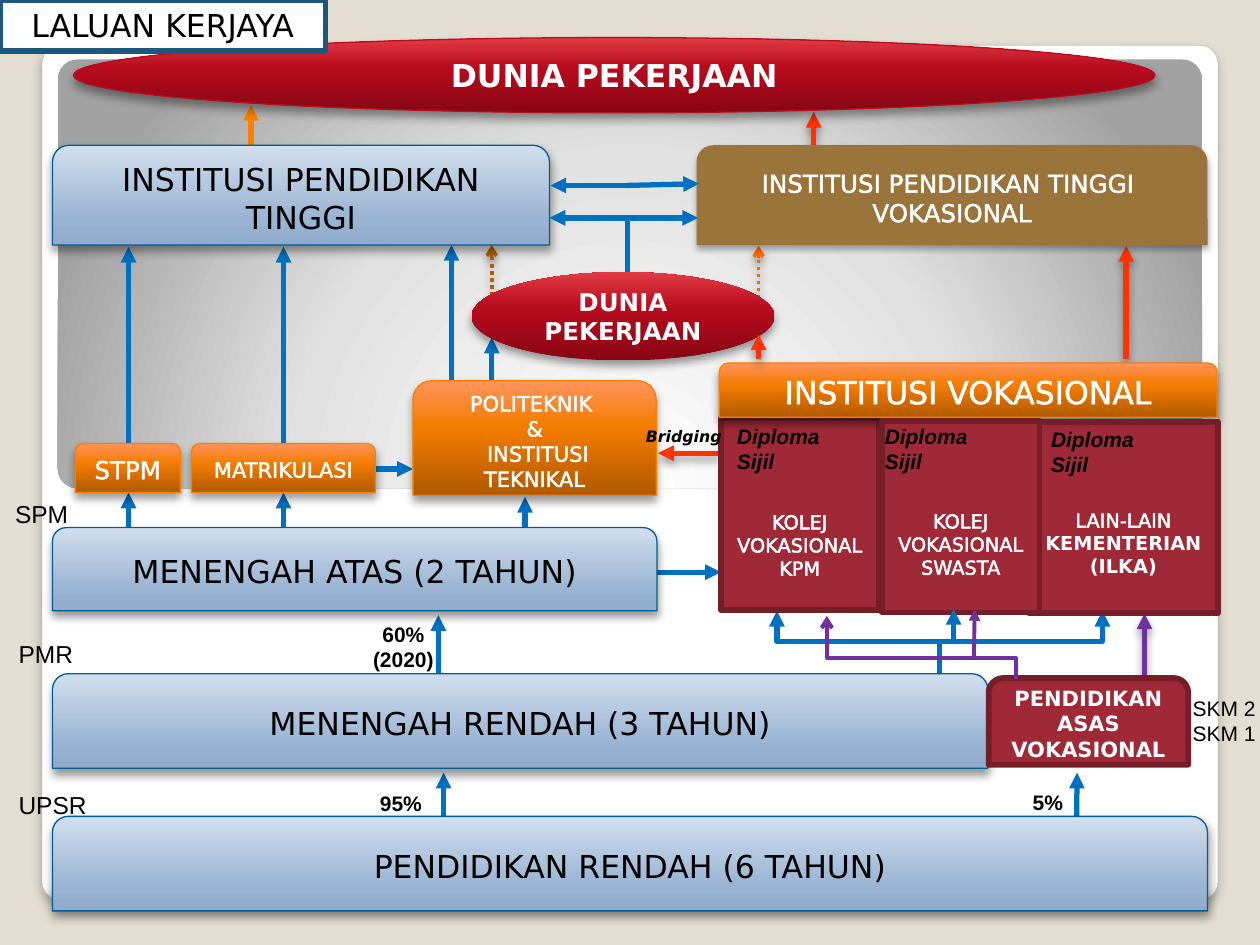
"""Build the LALUAN KERJAYA career pathway slide."""
from pptx import Presentation
from pptx.dml.color import RGBColor
from pptx.enum.dml import MSO_LINE
from pptx.enum.shapes import MSO_CONNECTOR as LINK, MSO_SHAPE as SHAPE
from pptx.enum.text import MSO_ANCHOR, MSO_AUTO_SIZE, PP_ALIGN
from pptx.oxml import parse_xml
from pptx.oxml.ns import nsdecls, qn
from pptx.util import Pt

SANS, ARIAL = "DejaVu Sans", "Arial"
WHITE, BLACK = "FFFFFF", "000000"
BLUE, RED, PURPLE = "0070C0", "FF3300", "7030A0"
SOFT, FAINT, PANEL = (40, 5.2, 3), (32, 3.5, 2.2), (25, 6, 4)
UP = '<a:lin ang="16200000" scaled="0"/>'
DOWN = '<a:lin ang="5400000" scaled="0"/>'
GLOW = '<a:path path="circle"><a:fillToRect l="50000" t="175000" r="50000" b="-75000"/></a:path>'

STYLES = {
    "white panel": (([(0, WHITE), (98, WHITE), (99, "F7F7F7"), (100, "DADADA")], DOWN),
                    ("A4A4A4", 0.16), PANEL),
    "grey panel": (([(0, WHITE), (55, "E1E1E1"), (100, "A2A2A2")], GLOW), None, None),
    "school": (([(0, "90ABCB"), (25, "99B3D2"), (100, "D1DEEE")], UP), ("035E94", 0.75), SOFT),
    "work": (([(0, "870614"), (60, "B80B1E"), (100, "E13C45")], UP), ("BC0B1F", 0.75), SOFT),
    "small work": (([(0, "870614"), (60, "B80B1E"), (100, "E13C45")], UP), None, SOFT),
    "college": (([(0, "B05A00"), (60, "F47C00"), (100, "FF945C")], UP), ("F97F00", 0.75), SOFT),
    "vocational": ("9F2936", ("761E28", 3.35), None),
    "brown": ("9A743A", None, FAINT),
}
PANELS = [("white panel", (24, 26, 672, 488), 0.021), ("grey panel", (33, 34, 654, 245), 0.046)]

TAB, OVAL, RECT = SHAPE.ROUND_2_SAME_RECTANGLE, SHAPE.OVAL, SHAPE.RECTANGLE
BOXES = [
    (RECT, "vocational", (412, 239, 90, 109.5), ["KOLEJ VOKASIONAL KPM"], 11, WHITE, 0.25, 35),
    (OVAL, "work", (42, 21.5, 618, 43), ["*DUNIA PEKERJAAN"], 18, WHITE, 0, 0),
    (TAB, "school", (30, 83, 284, 57), ["INSTITUSI PENDIDIKAN TINGGI"], 18, BLACK, 0.25, 0),
    (TAB, "brown", (398, 83, 292, 57), ["INSTITUSI PENDIDIKAN TINGGI ", "VOKASIONAL"],
     14, WHITE, 1.45, 0),
    (TAB, "school", (30, 466.5, 660, 54), ["PENDIDIKAN RENDAH (6 TAHUN)"], 18, BLACK, 0.25, 0),
    (TAB, "school", (30, 385, 534.5, 54), ["MENENGAH RENDAH (3 TAHUN)"], 18, BLACK, 0.25, 0),
    (TAB, "vocational", (565, 387.5, 114, 49.5), ["*PENDIDIKAN ASAS VOKASIONAL"], 12, WHITE, 0, 0),
    (TAB, "college", (43, 253.5, 60, 28), ["STPM"], 14, WHITE, 0.25, 0),
    (TAB, "college", (109.5, 253.5, 105, 28), ["MATRIKULASI"], 12, WHITE, 0.25, 0),
    (TAB, "school", (30, 301.5, 345.5, 47.5), ["MENENGAH ATAS (2 TAHUN)"], 18, BLACK, 0.25, 0),
    (OVAL, "small work", (269.5, 155.5, 173, 50.5), ["*DUNIA PEKERJAAN"], 14, WHITE, 0, 0),
    (TAB, "college", (411, 207.5, 284.5, 31), ["INSTITUSI VOKASIONAL"], 18, WHITE, 1.45, 0),
    (TAB, "college", (236, 217.5, 139, 65.5), ["POLITEKNIK ", "&", " INSTITUSI TEKNIKAL"],
     12, WHITE, 0.25, 0),
    (RECT, "vocational", (588, 241, 108, 109.5), ["LAIN-LAIN", "*KEMENTERIAN (ILKA)"],
     11, WHITE, 0.25, 29),
    (RECT, "vocational", (504, 240.5, 90, 109.5), ["KOLEJ VOKASIONAL SWASTA"], 11, WHITE, 0.25, 31),
]

LABELS = [
    ((3.5, 448, 90, 24.5), ["UPSR"], 14, ARIAL, "", False),
    ((3.5, 361.5, 90, 24.5), ["PMR"], 14, ARIAL, "", False),
    ((1.5, 281.5, 90, 24.5), ["SPM"], 14, ARIAL, "", False),
    ((205, 351.5, 51, 36), ["60%", "(2020)"], 12, ARIAL, "b", True),
    ((210, 448, 51, 21.5), ["95%"], 12, ARIAL, "b", False),
    ((583, 447.5, 51, 21.5), ["5%"], 12, ARIAL, "b", False),
    ((674.5, 394, 66, 36), ["SKM 2", "SKM 1"], 12, ARIAL, "", False),
    ((362, 240.5, 60, 18), ["Bridging"], 9, SANS, "bi", False),
] + [((x, y, 84, 36), ["Diploma", "Sijil"], 12, ARIAL, "bi", False)
     for x, y in ((414, 238.5), (498.5, 238.5), (593.5, 240))]

HEAD, BOTH, PLAIN, OPEN = {"tail": "triangle"}, {"head": "triangle", "tail": "triangle"}, {}, {"tail": "arrow"}
BACK_ARROWS = [
    (BLUE, 3, HEAD, None, [
        (300, 333, 300, 284), (258, 230, 258, 140), (366.5, 327, 412, 327), (191, 268, 236, 268),
        (281, 236, 281, 193), (250.5, 411, 250.5, 351.5), (253.5, 487, 253.5, 441.5),
        (615, 487, 615.5, 441.5)]
     + [(x, y1, x, y2) for x in (73.5, 162) for y1, y2 in ((263, 141), (330, 281.5))]),
    (BLUE, 3, PLAIN, None, [(358.5, 126, 358.5, 186), (537, 407.5, 537, 366.5)]),
    (RED, 3, HEAD, SOFT, [(412, 259, 376, 259), (465, 124, 465, 64), (643.5, 205, 643.5, 140.5)]),
    ("F97F00", 3, HEAD, None, [(143.5, 119, 143.5, 60)]),
    ("FF6600", 2, OPEN, SOFT, [(433.5, 170.5, 433.5, 140.5)]),
    ("B45F07", 2, OPEN, SOFT, [(281, 169, 281, 140)]),
    (PURPLE, 3, HEAD, SOFT, [(654, 386.5, 654, 350.5)]),
]
FRONT_ARROWS = [
    (RED, 3, HEAD, SOFT, [(433.5, 205, 433.5, 191)]),
    (BLUE, 3, HEAD, None, [(357, 106, 314.5, 106), (357, 106, 399.5, 105), (545, 366, 545, 348)]),
    (BLUE, 3, BOTH, None, [(314, 124.5, 399, 124.5)]),
    (PURPLE, 2.25, HEAD, None, [(556.5, 376.5, 557, 348)]),
]
FORK = [(444, 349), (444, 366.5), (630, 366.5), (630, 349)]
ELBOW = (544.5, 316, 508.5, 424)


def rgb(value):
    return RGBColor.from_string(value)


def points(values):
    return [Pt(v) for v in values]


def set_shadow(shape, shadow):
    props = shape._element.spPr
    effects = props.find(qn("a:effectLst"))
    if effects is None:
        effects = parse_xml(f"<a:effectLst {nsdecls('a')}/>")
        props.append(effects)
    if shadow:
        alpha, blur, dist = shadow
        effects.append(parse_xml(
            f'<a:outerShdw {nsdecls("a")} blurRad="{Pt(blur)}" dist="{Pt(dist)}" dir="5400000" '
            f'rotWithShape="0"><a:srgbClr val="{BLACK}"><a:alpha val="{alpha * 1000}"/>'
            '</a:srgbClr></a:outerShdw>'))


def set_line(shape, color, width, ends=PLAIN):
    shape.line.color.rgb = rgb(color)
    shape.line.width = Pt(width)
    for end, kind in ends.items():
        shape.line._get_or_add_ln().append(parse_xml(f'<a:{end}End {nsdecls("a")} type="{kind}"/>'))


def add_box(kind, style, frame):
    fill, line, shadow = STYLES[style]
    box = slide.shapes.add_shape(kind, *points(frame))
    box.shadow.inherit = False
    box.fill.solid()
    if isinstance(fill, str):
        box.fill.fore_color.rgb = rgb(fill)
    else:
        stops, direction = fill
        marks = "".join(f'<a:gs pos="{at * 1000}"><a:srgbClr val="{c}"/></a:gs>' for at, c in stops)
        props = box._element.spPr
        props.replace(props.find(qn("a:solidFill")), parse_xml(
            f'<a:gradFill {nsdecls("a")} rotWithShape="1"><a:gsLst>{marks}</a:gsLst>{direction}</a:gradFill>'))
    if line:
        set_line(box, *line)
    else:
        box.line.fill.background()
    set_shadow(box, shadow)
    return box


def write(shape, lines, size, font, color, centred=True, marks="", outline=0):
    frame = shape.text_frame
    frame.word_wrap = True
    for i, text in enumerate(lines):
        para = frame.add_paragraph() if i else frame.paragraphs[0]
        para.alignment = PP_ALIGN.CENTER if centred else PP_ALIGN.LEFT
        run = para.add_run()
        run.text = text.lstrip("*")
        run.font.name, run.font.size = font, Pt(size)
        run.font.bold = "b" in marks or text.startswith("*")
        run.font.italic = "i" in marks
        run.font.color.rgb = rgb(color)
        if outline and not run.font.bold:
            run.font._element.insert(0, parse_xml(
                f'<a:ln {nsdecls("a")} w="{Pt(outline)}"><a:solidFill><a:srgbClr val="{color}"/>'
                '</a:solidFill></a:ln>'))


def add_arrows(groups):
    for color, width, ends, shadow, routes in groups:
        for route in routes:
            arrow = slide.shapes.add_connector(LINK.STRAIGHT, *points(route))
            if ends is OPEN:
                arrow.line.dash_style = MSO_LINE.ROUND_DOT
            set_line(arrow, color, width, ends)
            set_shadow(arrow, shadow)


deck = Presentation()
deck.slide_width, deck.slide_height = Pt(720), Pt(540)
slide = deck.slides.add_slide(deck.slide_layouts[5])
slide.background.fill.solid()
slide.background.fill.fore_color.rgb = rgb("E3DED1")

for style, frame, corner in PANELS:
    add_box(SHAPE.ROUNDED_RECTANGLE, style, frame).adjustments[0] = corner
add_arrows(BACK_ARROWS)

outline = slide.shapes.build_freeform(*points(FORK[0]))
outline.add_line_segments([points(p) for p in FORK[1:]], close=False)
fork = outline.convert_to_shape()
fork.shadow.inherit = False
fork.fill.background()
set_line(fork, BLUE, 3, BOTH)

for kind, style, frame, lines, size, color, edge, drop in BOXES:
    box = add_box(kind, style, frame)
    box.text_frame.vertical_anchor = MSO_ANCHOR.MIDDLE
    box.text_frame.margin_top = Pt(3.6 + drop)
    write(box, lines, size, SANS, color, outline=edge)

add_arrows(FRONT_ARROWS)
elbow = slide.shapes.add_connector(LINK.ELBOW, *points(ELBOW))
elbow._element.spPr.find(qn("a:xfrm")).set("rot", "16200000")
elbow._element.spPr.find(qn("a:prstGeom")).get_or_add_avLst().append(
    parse_xml(f'<a:gd {nsdecls("a")} name="adj1" fmla="val 66700"/>'))
set_line(elbow, PURPLE, 2.25, {"head": "arrow"})
set_shadow(elbow, None)

for frame, lines, size, font, marks, centred in LABELS:
    write(slide.shapes.add_textbox(*points(frame)), lines, size, font, BLACK, centred, marks)

title = slide.shapes.title
title.left, title.top, title.width, title.height = points((0, 0, 186, 29))
title.fill.solid()
title.fill.fore_color.rgb = rgb(WHITE)
set_line(title, "1B587C", 3.35)
title.text_frame.auto_size = MSO_AUTO_SIZE.NONE
title.text_frame.vertical_anchor = MSO_ANCHOR.MIDDLE
write(title, ["LALUAN KERJAYA"], 18, SANS, BLACK)
slide.shapes._spTree.append(title._element)

deck.save("out.pptx")
